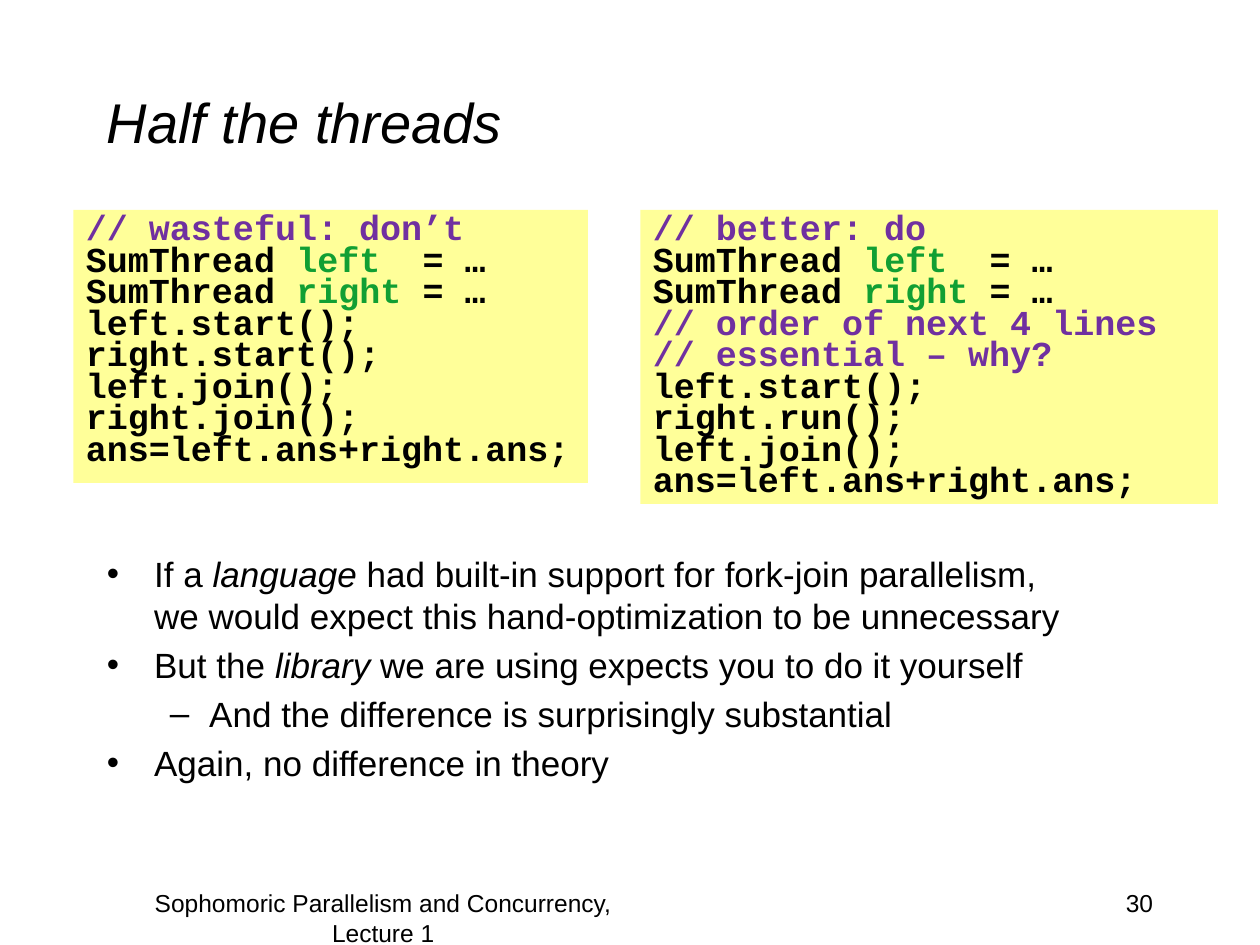
from dataclasses import dataclass

from lxml import etree
from pptx import Presentation
from pptx.dml.color import RGBColor
from pptx.enum import shapes, text
from pptx.oxml.ns import qn
from pptx.util import Pt

BLACK = RGBColor(0, 0, 0)
PURPLE = RGBColor(0x70, 0x30, 0xA0)
GREEN = RGBColor(0x11, 0x9F, 0x33)
YELLOW = RGBColor(0xFF, 0xFF, 0x99)


@dataclass
class Box:
    left: float
    top: float
    width: float
    height: float

    def rect(self) -> tuple:
        return Pt(self.left), Pt(self.top), Pt(self.width), Pt(self.height)


@dataclass
class Code:
    box: Box
    lines: list[str]


@dataclass
class Level:
    mark: str
    left: float
    hang: float


LEVELS = [Level("•", 27, 27), Level("–", 58.5, 22.5)]

# Asterisks enclose words to stress; \v is a line break.
POINTS = [
    (0, "If a *language* had built-in support for fork-join parallelism,\v"
        "we would expect this hand-optimization to be unnecessary"),
    (0, "But the *library* we are using expects you to do it yourself"),
    (1, "And the difference is surprisingly substantial"),
    (0, "Again, no difference in theory"),
]

SETUP = ["SumThread *left*  = …", "SumThread *right* = …"]
TOTAL = "ans=left.ans+right.ans;"
CODES = [
    Code(Box(42, 120, 294, 156), [
        "// wasteful: don’t", *SETUP,
        "left.start();", "right.start();",
        "left.join();", "right.join();", TOTAL]),
    Code(Box(366, 120, 330, 168), [
        "// better: do", *SETUP,
        "// order of next 4 lines", "// essential – why?",
        "left.start();", "right.run();", "left.join();", TOTAL]),
]


def style(font, size: float, name: str = "Arial", color=BLACK) -> None:
    font.size = Pt(size)
    font.name = name
    font.color.rgb = color


def add_runs(para, line: str) -> list:
    """Add the runs of a marked line; return the stressed ones."""
    strong = []
    for i, piece in enumerate(line.split("*")):
        for j, part in enumerate(piece.split("\v")):
            if j:
                para.add_line_break()
            if part:
                run = para.add_run()
                run.text = part
                if i % 2:
                    strong.append(run)
    return strong


def add_box(slide, box: Box):
    frame = slide.shapes.add_textbox(*box.rect()).text_frame
    frame.word_wrap = True
    return frame


def add_label(slide, box: Box, words: str, size: float, align):
    frame = add_box(slide, box)
    frame.text = words
    para = frame.paragraphs[0]
    para.alignment = align
    style(para.runs[0].font, size)
    return frame


def add_bullet(para, level: Level) -> None:
    props = para._p.get_or_add_pPr()
    props.set("marL", str(Pt(level.left)))
    props.set("indent", str(-Pt(level.hang)))
    space = etree.SubElement(props, qn("a:spcBef"))
    etree.SubElement(space, qn("a:spcPct")).set("val", "20000")
    etree.SubElement(props, qn("a:buFont")).set("typeface", "Arial")
    etree.SubElement(props, qn("a:buChar")).set("char", level.mark)


def add_points(slide, box: Box) -> None:
    frame = add_box(slide, box)
    for i, (depth, line) in enumerate(POINTS):
        para = frame.add_paragraph() if i else frame.paragraphs[0]
        para.level = depth
        add_bullet(para, LEVELS[depth])
        strong = add_runs(para, line)
        for run in para.runs:
            style(run.font, 20)
        for run in strong:
            run.font.italic = True


def add_code(slide, code: Code) -> None:
    shape = slide.shapes.add_shape(shapes.MSO_SHAPE.RECTANGLE, *code.box.rect())
    shape.shadow.inherit = False
    shape.fill.solid()
    shape.fill.fore_color.rgb = YELLOW
    shape.line.fill.background()
    frame = shape.text_frame
    frame.word_wrap = True
    frame.vertical_anchor = text.MSO_ANCHOR.TOP
    for i, line in enumerate(code.lines):
        para = frame.add_paragraph() if i else frame.paragraphs[0]
        para.alignment = text.PP_ALIGN.LEFT
        para.line_spacing = Pt(18)
        strong = add_runs(para, line)
        color = PURPLE if line.startswith("//") else BLACK
        for run in para.runs:
            style(run.font, 20, "Courier New", color)
            run.font.bold = True
        for run in strong:
            run.font.color.rgb = GREEN


def main() -> None:
    deck = Presentation()
    deck.slide_width, deck.slide_height = Pt(720), Pt(540)
    slide = deck.slides.add_slide(deck.slide_layouts[6])
    align = text.PP_ALIGN

    title = add_label(slide, Box(54, 24, 612, 90), "Half the threads", 32, align.LEFT)
    title.vertical_anchor = text.MSO_ANCHOR.MIDDLE
    title.paragraphs[0].runs[0].font.italic = True
    add_points(slide, Box(54, 312, 612, 150))
    add_label(slide, Box(516, 504, 150, 36), "30", 14, align.RIGHT)
    add_label(slide, Box(60, 504, 318, 36),
              "Sophomoric Parallelism and Concurrency, Lecture 1", 14, align.CENTER)
    for code in CODES:
        add_code(slide, code)
    deck.save("out.pptx")


if __name__ == "__main__":
    main()
